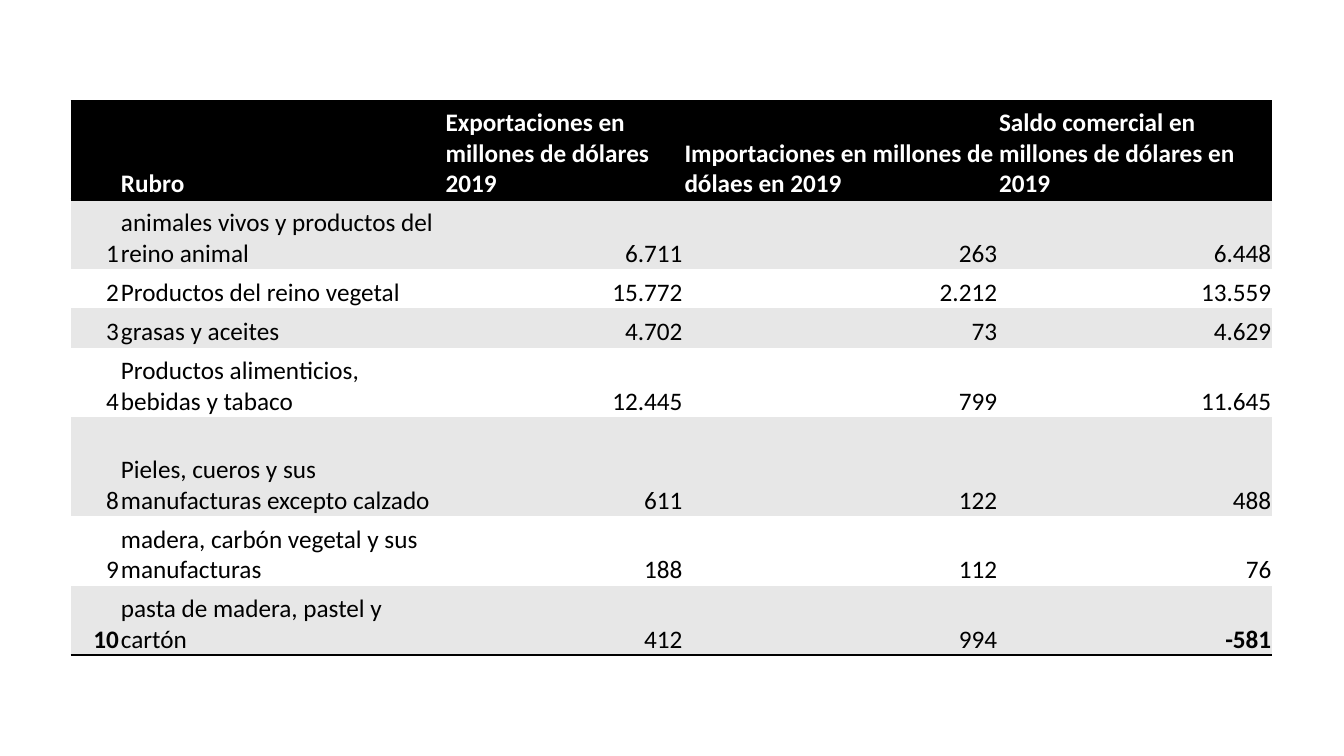
from lxml import etree
from pptx import Presentation
from pptx.dml.color import RGBColor
from pptx.enum.text import MSO_ANCHOR as Anchor, PP_ALIGN as Align
from pptx.oxml import parse_xml
from pptx.oxml.ns import nsdecls, qn
from pptx.util import Inches, Pt

COLORS = {"black": "000000", "white": "FFFFFF", "band": "E7E7E7"}
PLAIN_TABLE_STYLE = "{2D5ABB26-0587-4C30-8999-92F81FD0307C}"
COLUMN_WIDTHS = [0.49, 3.22, 2.37, 3.12, 2.72]
ROW_HEIGHTS = [0.98, 0.69, 0.39, 0.39, 0.69, 0.98, 0.69, 0.69]
TRADE_ROWS = [
    ["", "Rubro", "Exportaciones en millones de dólares 2019",
     "Importaciones en millones de dólaes en 2019",
     "Saldo comercial en millones de dólares en 2019"],
    ["1", "animales vivos y productos del reino animal", "6.711", "263", "6.448"],
    ["2", "Productos del reino vegetal", "15.772", "2.212", "13.559"],
    ["3", "grasas y aceites", "4.702", "73", "4.629"],
    ["4", "Productos alimenticios, bebidas y tabaco", "12.445", "799", "11.645"],
    ["8", "Pieles, cueros y sus manufacturas excepto calzado", "611", "122", "488"],
    ["9", "madera, carbón vegetal y sus manufacturas", "188", "112", "76"],
    ["10", "pasta de madera, pastel y cartón", "412", "994", "-581"],
]
BOLD_VALUES = {"10", "-581"}


class TradeSlide:
    """Hold the style and the slide, and draw its elements."""

    def __init__(self, presentation, font="Calibri", size=18):
        self.slide = presentation.slides.add_slide(presentation.slide_layouts[6])
        self.font = font
        self.size = size

    def color(self, name):
        return RGBColor.from_string(COLORS[name])

    def add_text(self, cell, text, color, bold, alignment):
        paragraph = cell.text_frame.paragraphs[0]
        paragraph.alignment = alignment
        run = paragraph.add_run()
        run.text = text
        run.font.name = self.font
        run.font.size = Pt(self.size)
        run.font.bold = bold
        run.font.color.rgb = self.color(color)

    def add_borders(self, cell, sides):
        properties = cell._tc.get_or_add_tcPr()
        for position, side in enumerate(sides):
            border = parse_xml(f'<a:ln{side} {nsdecls("a")} w="{Pt(2)}"/>')
            fill = etree.SubElement(border, qn("a:solidFill"))
            etree.SubElement(fill, qn("a:srgbClr"), val=COLORS["black"])
            properties.insert(position, border)

    def fill_cell(self, cell, text, row, column, last_row):
        is_header = row == 0
        cell.vertical_anchor = Anchor.BOTTOM
        cell.margin_left = cell.margin_right = cell.margin_top = Inches(0.01)
        cell.margin_bottom = 0
        cell.fill.solid()
        background = "black" if is_header else "band" if row % 2 else "white"
        cell.fill.fore_color.rgb = self.color(background)
        if text:
            is_left = is_header or column == 1
            self.add_text(cell, text, "white" if is_header else "black",
                          is_header or text in BOLD_VALUES,
                          Align.LEFT if is_left else Align.RIGHT)
        if is_header:
            self.add_borders(cell, "TB")
        elif row == last_row:
            self.add_borders(cell, "B")

    def add_table(self, rows, left, top, widths, heights):
        frame = self.slide.shapes.add_table(
            len(rows), len(widths), Inches(left), Inches(top),
            Inches(sum(widths)), Inches(sum(heights)))
        table = frame.table
        table.horz_banding = False
        table._tbl.tblPr.find(qn("a:tableStyleId")).text = PLAIN_TABLE_STYLE
        for column, width in zip(table.columns, widths):
            column.width = Inches(width)
        for row, height in zip(table.rows, heights):
            row.height = Inches(height)
        for row, texts in enumerate(rows):
            for column, text in enumerate(texts):
                self.fill_cell(table.cell(row, column), text, row, column, len(rows) - 1)


def main():
    presentation = Presentation()
    presentation.slide_width = Inches(13.33)
    presentation.slide_height = Inches(7.5)
    trade_slide = TradeSlide(presentation)
    trade_slide.add_table(TRADE_ROWS, 0.7, 1, COLUMN_WIDTHS, ROW_HEIGHTS)
    presentation.save("out.pptx")


if __name__ == "__main__":
    main()
